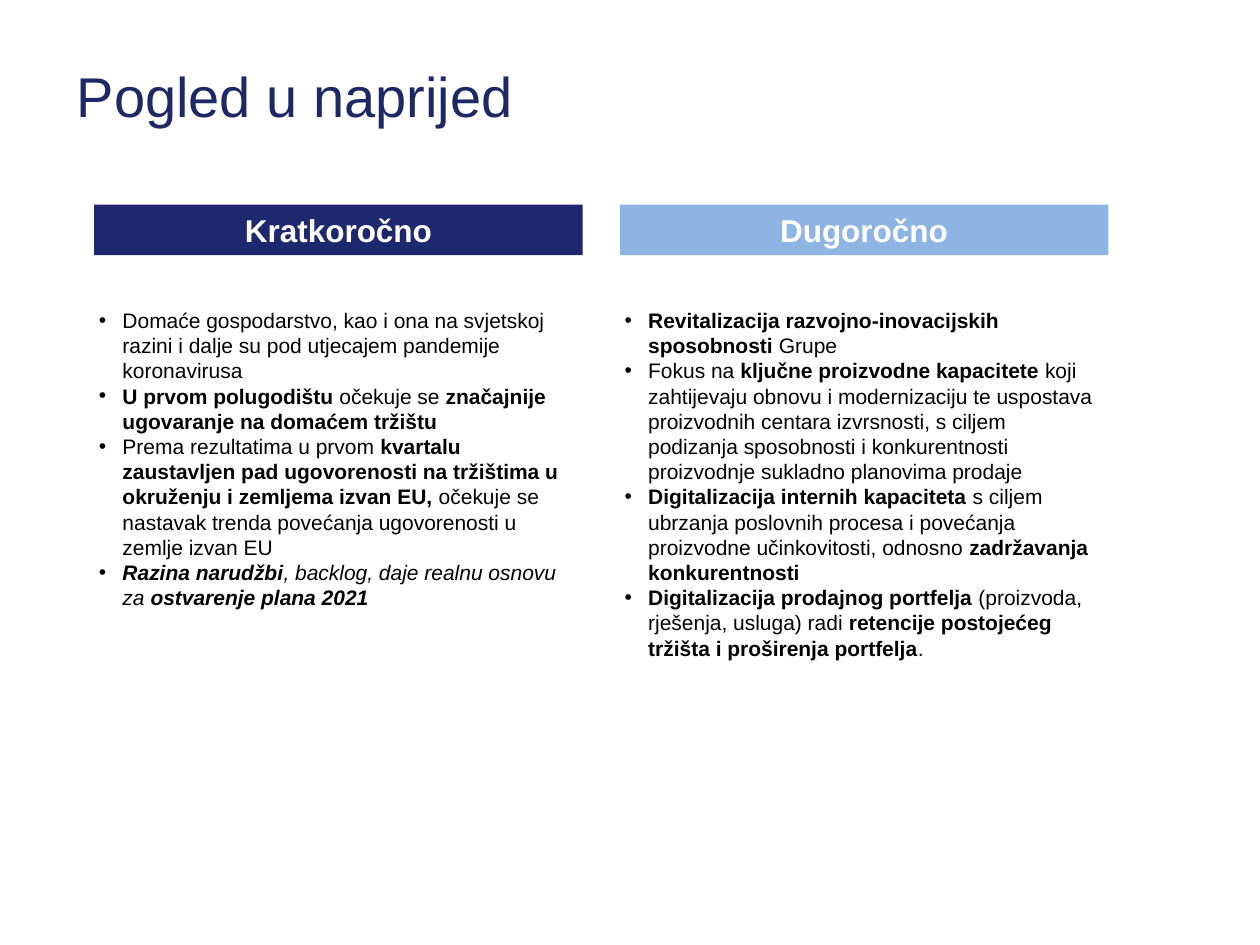
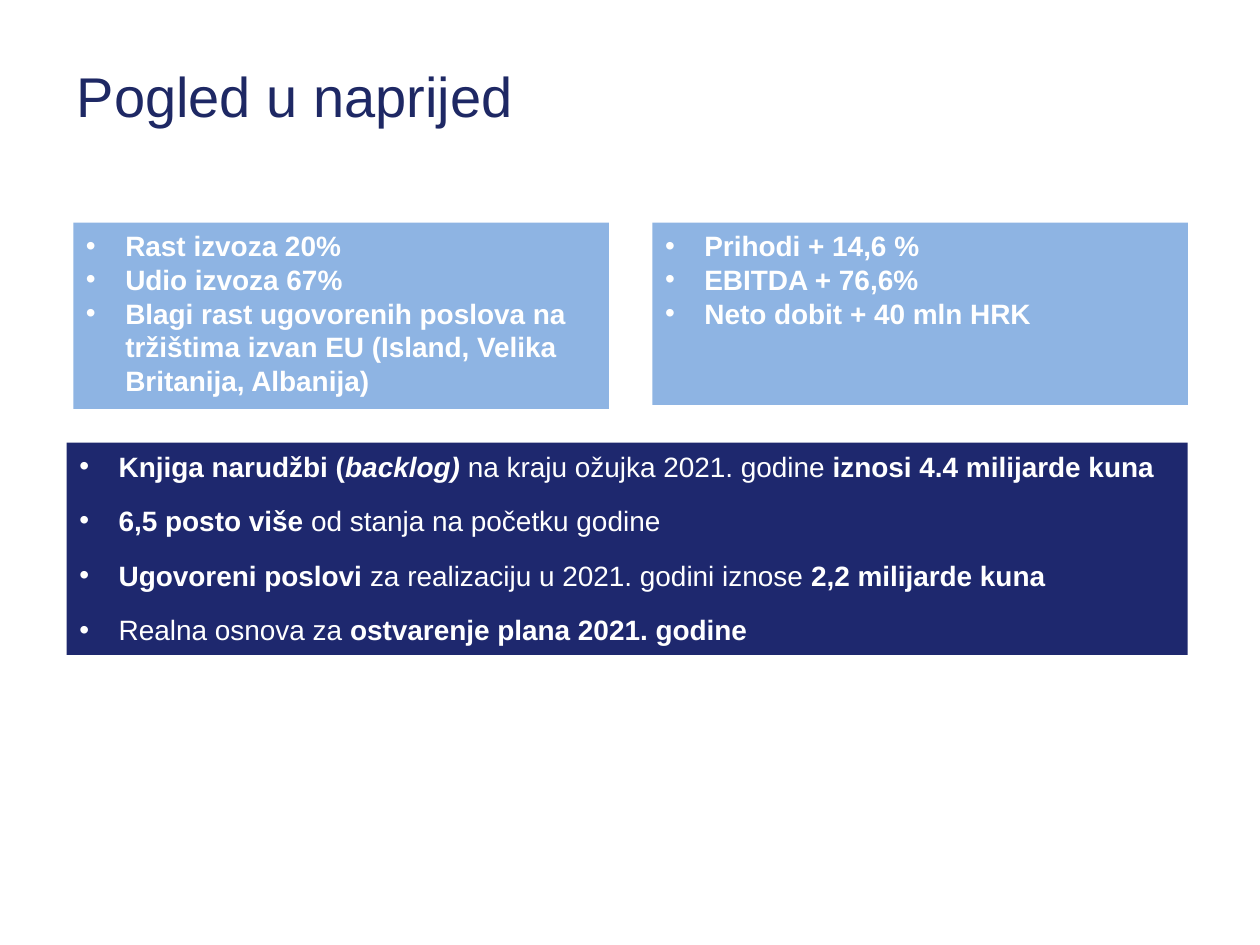
from dataclasses import dataclass
from typing import Sequence

from lxml.etree import SubElement
from pptx import Presentation
from pptx.dml.color import RGBColor
from pptx.enum.shapes import MSO_SHAPE
from pptx.enum.text import MSO_ANCHOR, MSO_AUTO_SIZE, PP_ALIGN
from pptx.oxml.ns import qn
from pptx.util import Pt

# Shared look
COLORS = {"title": "1E2864", "navy": "1E286E", "sky": "8EB4E3",
          "white": "FFFFFF", "black": "000000"}
FONT = "Arial"
TITLE = "Pogled u naprijed"
COMPARISON_LAYOUT = 4


@dataclass(frozen=True)
class Span:
    text: str
    bold: bool = False
    italic: bool = False


@dataclass(frozen=True)
class Box:
    left: float
    top: float
    width: float
    height: float


@dataclass(frozen=True)
class Outlook:
    heading: str
    fill: str
    points: Sequence[Sequence[Span]]


@dataclass(frozen=True)
class Panel:
    box: Box
    fill: str
    points: Sequence[Sequence[Span]]
    gap: float = 0


def bold(text: str) -> Span:
    return Span(text, bold=True)


def rgb(name: str) -> RGBColor:
    return RGBColor.from_string(COLORS[name])


def place(shape, box: Box) -> None:
    shape.left, shape.top = Pt(box.left), Pt(box.top)
    shape.width, shape.height = Pt(box.width), Pt(box.height)


def paint(shape, color: str) -> None:
    shape.fill.solid()
    shape.fill.fore_color.rgb = rgb(color)
    shape.line.fill.background()


def write(shape, paragraphs: Sequence[Sequence[Span]], *, size: float, color: str,
          align=PP_ALIGN.LEFT, anchor=MSO_ANCHOR.TOP,
          indent: float = 0, gap: float = 0) -> None:
    """Fill a shape with formatted paragraphs; an indent makes them bullets."""
    frame = shape.text_frame
    frame.word_wrap = True
    frame.auto_size = MSO_AUTO_SIZE.NONE
    frame.vertical_anchor = anchor
    for number, spans in enumerate(paragraphs):
        paragraph = frame.add_paragraph() if number else frame.paragraphs[0]
        if indent:
            properties = paragraph._p.get_or_add_pPr()
            properties.set("marL", str(Pt(indent)))
            properties.set("indent", str(-Pt(indent)))
            SubElement(properties, qn("a:buFont"), typeface=FONT)
            SubElement(properties, qn("a:buChar"), char="•")
        paragraph.alignment = align
        paragraph.space_before = Pt(gap if number else 0)
        paragraph.space_after = Pt(gap)
        for span in spans:
            run = paragraph.add_run()
            run.text = span.text
            run.font.name, run.font.size = FONT, Pt(size)
            run.font.bold, run.font.italic = span.bold, span.italic
            run.font.color.rgb = rgb(color)


def add_titled_slide(deck):
    slide = deck.slides.add_slide(deck.slide_layouts[COMPARISON_LAYOUT])
    title = slide.shapes.title
    place(title, Box(36.72, 31.68, 635, 45.36))
    write(title, [[Span(TITLE)]], size=32, color="title", anchor=MSO_ANCHOR.MIDDLE)
    return slide


def remove_empty_placeholders(slide) -> None:
    for holder in list(slide.placeholders):
        if not holder.text_frame.text:
            holder.element.getparent().remove(holder.element)


# Short-term and long-term outlook
OUTLOOKS = [
    Outlook("Kratkoročno", "navy", [
        [Span("Domaće gospodarstvo, kao i ona na svjetskoj razini i dalje su pod "
              "utjecajem pandemije koronavirusa")],
        [bold("U prvom polugodištu "), Span("očekuje se "),
         bold("značajnije ugovaranje na domaćem tržištu")],
        [Span("Prema rezultatima u prvom "),
         bold("kvartalu zaustavljen pad ugovorenosti na tržištima u okruženju "
              "i zemljema izvan EU, "),
         Span("očekuje se nastavak trenda povećanja ugovorenosti u zemlje izvan EU")],
        [Span("Razina narudžbi", True, True),
         Span(", backlog, daje realnu osnovu za ", italic=True),
         Span("ostvarenje plana 2021", True, True)],
    ]),
    Outlook("Dugoročno", "sky", [
        [bold("Revitalizacija razvojno-inovacijskih sposobnosti "), Span("Grupe")],
        [Span("Fokus na "), bold("ključne proizvodne kapacitete "),
         Span("koji zahtijevaju obnovu i modernizaciju te uspostava proizvodnih "
              "centara izvrsnosti, s ciljem podizanja sposobnosti i konkurentnosti "
              "proizvodnje sukladno planovima prodaje")],
        [bold("Digitalizacija internih kapaciteta "),
         Span("s ciljem ubrzanja poslovnih procesa i povećanja proizvodne "
              "učinkovitosti, odnosno "), bold("zadržavanja konkurentnosti")],
        [bold("Digitalizacija prodajnog portfelja "),
         Span("(proizvoda, rješenja, usluga) radi "),
         bold("retencije postojećeg tržišta i proširenja portfelja"), Span(".")],
    ]),
]

# Results and order book
PANELS = [
    Panel(Box(41.9, 127.2, 306, 106.5), "sky", [
        [bold("Rast izvoza 20%")],
        [bold("Udio izvoza 67%")],
        [bold("Blagi rast ugovorenih poslova na tržištima izvan EU "
              "(Island, Velika Britanija, Albanija)")],
    ]),
    Panel(Box(372.8, 127.2, 306, 104.2), "sky", [
        [bold("Prihodi + 14,6 %")],
        [bold("EBITDA + 76,6%")],
        [bold("Neto dobit + 40 mln HRK")],
    ]),
    Panel(Box(38.1, 253, 640.6, 121.2), "navy", [
        [bold("Knjiga narudžbi ("), Span("backlog) ", True, True),
         Span("na kraju ožujka 2021. godine "), bold("iznosi 4.4 milijarde kuna")],
        [bold("6,5 posto više "), Span("od stanja na početku godine")],
        [bold("Ugovoreni poslovi "), Span("za realizaciju u 2021. godini iznose "),
         bold("2,2 milijarde kuna")],
        [Span("Realna osnova za "), bold("ostvarenje plana 2021. godine")],
    ], gap=6),
]


def build_outlook(deck) -> None:
    slide = add_titled_slide(deck)
    for column, (outlook, holder_id) in enumerate(zip(OUTLOOKS, (2, 4))):
        left = 53.8 + column * 300.4
        band = Box(left, 117, 279.2, 28.8)
        heading = slide.shapes.add_shape(
            MSO_SHAPE.RECTANGLE, Pt(band.left), Pt(band.top),
            Pt(band.width), Pt(band.height))
        heading.shadow.inherit = False
        paint(heading, outlook.fill)
        write(heading, [[bold(outlook.heading)]], size=18, color="white",
              align=PP_ALIGN.CENTER, anchor=MSO_ANCHOR.MIDDLE)
        points = slide.placeholders[holder_id]
        place(points, Box(left - 4.5, 172.1, 284, 225))
        write(points, outlook.points, size=12, color="black", indent=13.5)
    remove_empty_placeholders(slide)


def build_results(deck) -> None:
    slide = add_titled_slide(deck)
    for panel, holder_id in zip(PANELS, (2, 4, 1)):
        points = slide.placeholders[holder_id]
        place(points, panel.box)
        paint(points, panel.fill)
        write(points, panel.points, size=16, color="white", indent=22.5, gap=panel.gap)
    remove_empty_placeholders(slide)


def main() -> None:
    deck = Presentation()
    deck.slide_width, deck.slide_height = Pt(720), Pt(540)
    build_outlook(deck)
    build_results(deck)
    deck.save("out.pptx")


if __name__ == "__main__":
    main()
